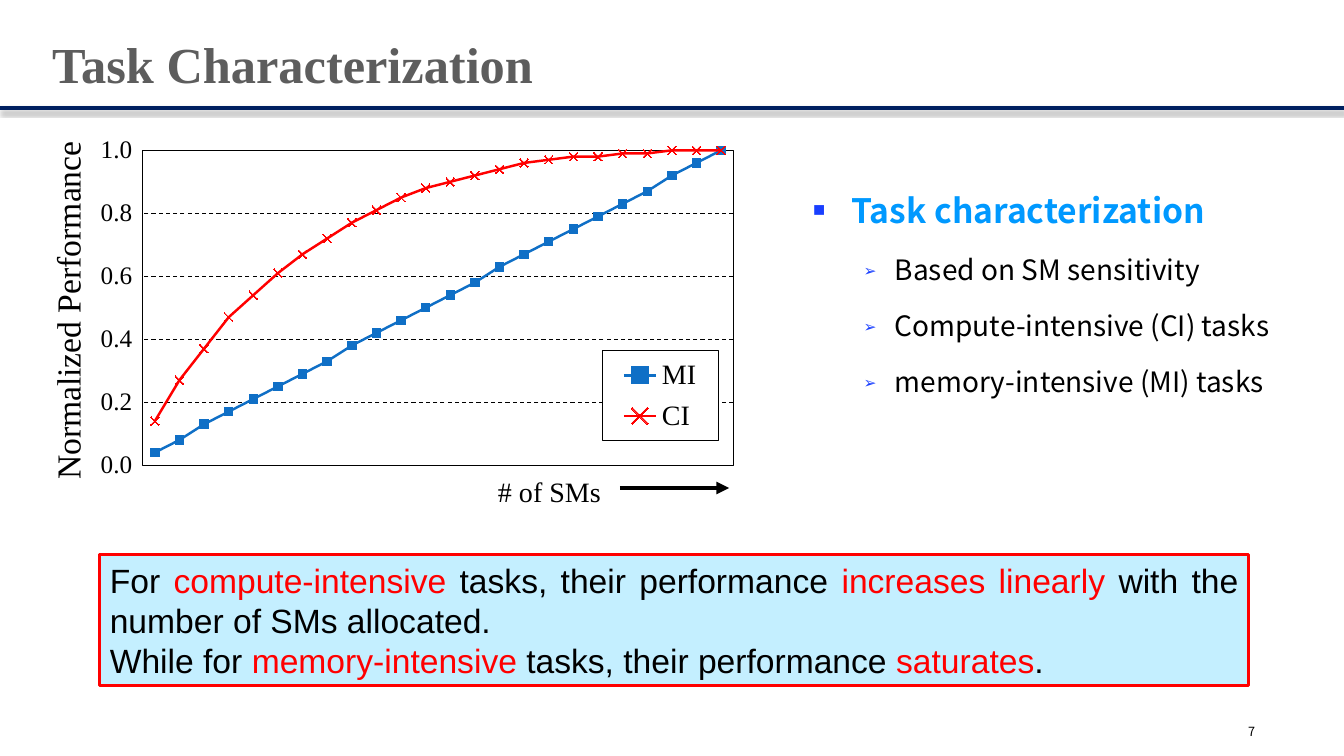
from lxml.etree import SubElement
from pptx import Presentation
from pptx.chart.data import CategoryChartData
from pptx.dml.color import RGBColor
from pptx.enum.chart import XL_CHART_TYPE, XL_LEGEND_POSITION, XL_MARKER_STYLE, XL_TICK_MARK
from pptx.enum.dml import MSO_LINE
from pptx.enum.shapes import MSO_CONNECTOR, MSO_SHAPE
from pptx.enum.text import MSO_ANCHOR, MSO_AUTO_SIZE, PP_ALIGN
from pptx.oxml import parse_xml
from pptx.oxml.ns import nsdecls, qn
from pptx.util import Inches, Pt

COLORS = {"black": "000000", "title": "5D5D5D", "navy": "002060", "heading": "0099FF",
          "bullet": "193FFF", "blue": "0F6FC6", "red": "FF0000", "panel": "C4EFFF"}
SERIF, SANS, BODY = "Times New Roman", "Arial", "Noto Sans CJK SC"
SERIES = [
    ("MI", "blue", XL_MARKER_STYLE.SQUARE,
     [0.04, 0.08, 0.13, 0.17, 0.21, 0.25, 0.29, 0.33, 0.38, 0.42, 0.46, 0.5,
      0.54, 0.58, 0.63, 0.67, 0.71, 0.75, 0.79, 0.83, 0.87, 0.92, 0.96, 1]),
    ("CI", "red", XL_MARKER_STYLE.X,
     [0.14, 0.27, 0.37, 0.47, 0.54, 0.61, 0.67, 0.72, 0.77, 0.81, 0.85, 0.88,
      0.9, 0.92, 0.94, 0.96, 0.97, 0.98, 0.98, 0.99, 0.99, 1, 1, 1]),
]
BULLETS = [("Task characterization", 0), ("Based on SM sensitivity", 1),
           ("Compute-intensive (CI) tasks", 1), ("memory-intensive (MI) tasks", 1)]
LEVELS = [("■", SANS, 60, 0.38, 0.38, 24, "heading"), ("➢", BODY, 55, 0.81, 0.31, 20, "black")]
SUMMARY = [
    [("For ", "black"), ("compute-intensive", "red"), (" tasks, their performance ", "black"),
     ("increases linearly", "red"), (" with the number of SMs allocated.", "black")],
    [("While for ", "black"), ("memory-intensive", "red"), (" tasks, their performance ", "black"),
     ("saturates", "red"), (".", "black")],
]


def color(name):
    return RGBColor.from_string(COLORS[name])


class SlideBuilder:
    """Draws styled elements on a slide divided into 16 columns and 9 rows."""

    def __init__(self, deck):
        self.column, self.row = deck.slide_width / 16, deck.slide_height / 9
        self.slide = deck.slides.add_slide(deck.slide_layouts[1])
        self.shapes = self.slide.shapes

    def area(self, left, top, width, height):
        return (int(left * self.column), int(top * self.row),
                int(width * self.column), int(height * self.row))

    def place(self, shape, *cells):
        shape.left, shape.top, shape.width, shape.height = self.area(*cells)

    def style(self, font, size, name="black", face=SERIF, bold=False):
        font.size, font.name, font.bold = Pt(size), face, bold
        font.color.rgb = color(name)

    def stroke(self, line, name, width):
        line.color.rgb, line.width = color(name), Pt(width)

    def title(self, text, *cells):
        box = self.shapes.title
        self.place(box, *cells)
        frame = box.text_frame
        frame.text = text
        frame.auto_size, frame.vertical_anchor = MSO_AUTO_SIZE.NONE, MSO_ANCHOR.BOTTOM
        frame.paragraphs[0].alignment = PP_ALIGN.LEFT
        self.style(frame.paragraphs[0].runs[0].font, 36, "title", bold=True)

    def bullets(self, items, *cells):
        box = self.slide.placeholders[1]
        self.place(box, *cells)
        frame = box.text_frame
        frame.auto_size = MSO_AUTO_SIZE.NONE
        frame.text = "\n".join(text for text, level in items)
        for para, (text, level) in zip(frame.paragraphs, items):
            mark, face, percent, margin, hanging, size, name = LEVELS[level]
            para.level, para.line_spacing = level, 1.5
            self.style(para.runs[0].font, size, name, BODY, level == 0)
            props = para._p.get_or_add_pPr()
            props.set("marL", str(Inches(margin)))
            props.set("indent", str(-Inches(hanging)))
            SubElement(SubElement(props, qn("a:buClr")), qn("a:srgbClr"), val=COLORS["bullet"])
            SubElement(props, qn("a:buSzPct"), val=str(percent * 1000))
            SubElement(props, qn("a:buFont"), typeface=face)
            SubElement(props, qn("a:buChar"), char=mark)

    def label(self, text, size, face, *cells):
        frame = self.shapes.add_textbox(*self.area(*cells)).text_frame
        frame.word_wrap, frame.text = True, text
        self.style(frame.paragraphs[0].runs[0].font, size, face=face)

    def line(self, left, right, row, name, arrow=False, shadow=False):
        start, top, width, _ = self.area(left, row, right - left, 0)
        connector = self.shapes.add_connector(
            MSO_CONNECTOR.STRAIGHT, start, top, start + width, top)
        self.stroke(connector.line, name, 3)
        if arrow:
            SubElement(connector.line._get_or_add_ln(), qn("a:tailEnd"), type="triangle")
        effects = SubElement(connector._element.spPr, qn("a:effectLst"))
        if shadow:
            cast = SubElement(effects, qn("a:outerShdw"), blurRad=str(Pt(3.1)),
                              dist=str(Pt(1.8)), dir="5400000", rotWithShape="0")
            tint = SubElement(cast, qn("a:srgbClr"), val=COLORS["black"])
            SubElement(tint, qn("a:alpha"), val="35000")

    def panel(self, lines, *cells):
        box = self.shapes.add_shape(MSO_SHAPE.RECTANGLE, *self.area(*cells))
        box.shadow.inherit = False
        box.fill.solid()
        box.fill.fore_color.rgb = color("panel")
        self.stroke(box.line, "red", 2.25)
        frame = box.text_frame
        frame.word_wrap, frame.vertical_anchor = True, MSO_ANCHOR.MIDDLE
        frame.text = "\n".join("".join(text for text, name in spans) for spans in lines)
        for para, spans in zip(frame.paragraphs, lines):
            para.text, para.alignment = "", PP_ALIGN.JUSTIFY
            for text, name in spans:
                span = para.add_run()
                span.text = text
                self.style(span.font, 24, name, SANS)

    def layout(self, parent, index, inner=False, **shares):
        for old in parent.findall(qn("c:layout")):
            parent.remove(old)
        layout = parse_xml(f"<c:layout {nsdecls('c')}/>")
        manual = SubElement(layout, qn("c:manualLayout"))
        if inner:
            SubElement(manual, qn("c:layoutTarget"), val="inner")
        for key in "xy":
            SubElement(manual, qn(f"c:{key}Mode"), val="edge")
        for key, share in shares.items():
            SubElement(manual, qn(f"c:{key}"), val=str(share))
        parent.insert(index, layout)

    def frame_xml(self, fill):
        return parse_xml(
            f"<c:spPr {nsdecls('c', 'a')}>{fill}<a:ln w='{Pt(0.75)}'><a:solidFill>"
            f"<a:srgbClr val='{COLORS['black']}'/></a:solidFill></a:ln></c:spPr>")

    def chart(self, series_list, axis_name, *cells):
        data = CategoryChartData()
        data.categories = [str(count) for count in range(1, 25)]
        for name, _, _, values in series_list:
            data.add_series(name, values)
        chart = self.shapes.add_chart(
            XL_CHART_TYPE.LINE_MARKERS, *self.area(*cells), data).chart
        chart.has_title = False
        self.style(chart.font, 10, face="Cabin")
        for series, (_, name, marker, _) in zip(chart.plots[0].series, series_list):
            series.smooth = False
            self.stroke(series.format.line, name, 1.75)
            series.marker.style, series.marker.size = marker, 6
            series.marker.format.fill.solid()
            series.marker.format.fill.fore_color.rgb = color(name)
            self.stroke(series.marker.format.line, name, 0.75)
        chart.category_axis.visible = False
        self.value_axis(chart.value_axis, axis_name)
        self.legend(chart)
        plot_area = chart._chartSpace.chart.plotArea
        self.layout(plot_area, 0, True, x=0.158, y=0.146, w=0.819, h=0.629)
        plot_area.append(self.frame_xml("<a:noFill/>"))

    def value_axis(self, axis, name):
        axis.minimum_scale, axis.maximum_scale, axis.major_unit = 0, 1, 0.2
        axis.major_tick_mark = axis.minor_tick_mark = XL_TICK_MARK.NONE
        axis.tick_labels.number_format = "#,##0.0_);[Red]\\(#,##0.0\\)"
        axis.tick_labels.number_format_is_linked = False
        self.style(axis.tick_labels.font, 18)
        self.stroke(axis.format.line, "black", 0.75)
        self.stroke(axis.major_gridlines.format.line, "black", 0.75)
        axis.major_gridlines.format.line.dash_style = MSO_LINE.DASH
        frame = axis.axis_title.text_frame
        frame.text = name
        self.style(frame.paragraphs[0].runs[0].font, 24)
        frame._txBody.bodyPr.set("rot", "-5400000")
        frame._txBody.bodyPr.set("vert", "horz")
        self.layout(axis.axis_title._element, 1, x=0.016, y=0.116)

    def legend(self, chart):
        chart.has_legend = True
        legend = chart.legend
        legend.position, legend.include_in_layout = XL_LEGEND_POSITION.TOP, False
        self.style(legend.font, 20)
        self.layout(legend._element, 1, x=0.795, y=0.546, w=0.161, h=0.18)
        fill = "<a:solidFill><a:srgbClr val='FFFFFF'/></a:solidFill>"
        legend._element.find(qn("c:txPr")).addprevious(self.frame_xml(fill))


def main():
    deck = Presentation()
    deck.slide_width, deck.slide_height = Inches(13.33), Inches(7.5)
    page = SlideBuilder(deck)
    page.line(0, 16, 1.29, "navy", shadow=True)
    page.label("7", 9, BODY, 14.74, 8.56, 0.76, 0.3)
    page.title("Task Characterization", 0.5, 0.46, 15, 0.72)
    page.chart(SERIES, "Normalized Performance", 0.34, 0.92, 8.59, 5.96)
    page.label("# of SMs", 20, SERIF, 5.81, 5.59, 1.56, 0.54)
    page.line(7.38, 8.68, 5.81, "black", arrow=True)
    page.bullets(BULLETS, 9.56, 1.96, 6.44, 3.55)
    page.panel(SUMMARY, 1.19, 6.6, 13.67, 1.56)
    deck.save("out.pptx")


if __name__ == "__main__":
    main()
